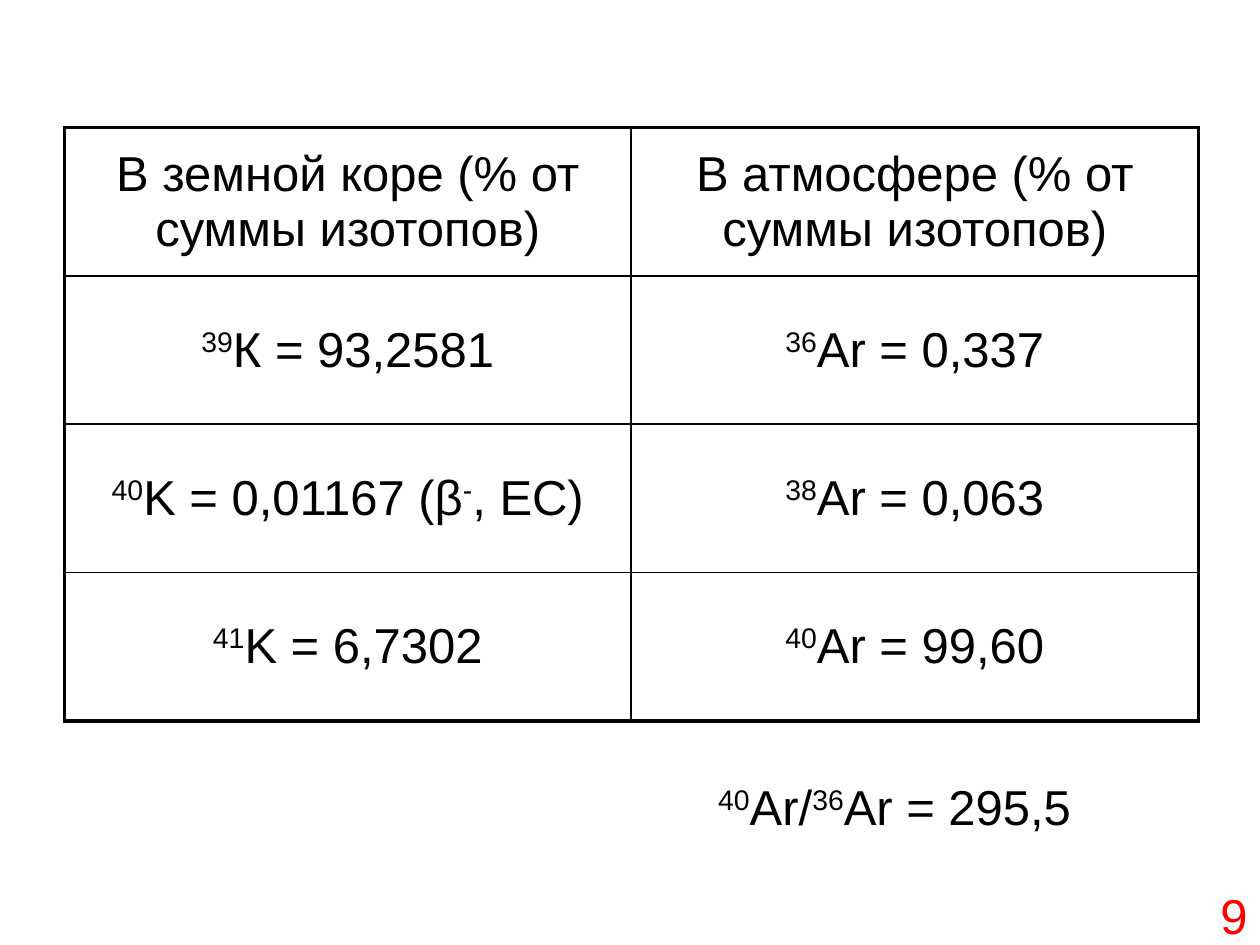
from lxml.etree import SubElement
from pptx import Presentation
from pptx.dml.color import RGBColor
from pptx.enum.text import MSO_ANCHOR as Anchor, MSO_AUTO_SIZE as AutoSize, PP_ALIGN as Align
from pptx.oxml.ns import qn
from pptx.util import Inches, Pt

BLACK, RED = "000000", "FF0000"
THIN, THICK = Pt(1), Pt(2.25)
FONT_FORMAT = {"name": "Arial", "size": Pt(28), "bold": False}


def write(frame, marked_text, color, paragraph_format):
    paragraph = frame.paragraphs[0]
    for key, value in paragraph_format.items():
        setattr(paragraph, key, value)
    for position, piece in enumerate(marked_text.split("^")):
        if not piece:
            continue
        run = paragraph.add_run()
        run.text = piece
        for key, value in FONT_FORMAT.items():
            setattr(run.font, key, value)
        run.font.color.rgb = RGBColor.from_string(color)
        if position % 2:
            run.font._element.set("baseline", "30000")


def draw_border(cell, order, side, width, color):
    properties = cell._tc.get_or_add_tcPr()
    line = SubElement(properties, qn(f"a:ln{side}"), w=str(width))
    fill = SubElement(line, qn("a:solidFill"))
    SubElement(fill, qn("a:srgbClr"), val=color)
    properties.insert(order, line)


deck = Presentation()
deck.slide_width, deck.slide_height = Inches(10), Inches(7.5)
W, H = deck.slide_width, deck.slide_height
slide = deck.slides.add_slide(deck.slide_layouts[6])

isotope_rows = [
    ("В земной коре (% от суммы изотопов)", "В атмосфере (% от суммы изотопов)"),
    ("^39^К = 93,2581", "^36^Ar = 0,337"),
    ("^40^K = 0,01167 (β^-^, EC)", "^38^Ar = 0,063"),
    ("^41^K = 6,7302", "^40^Ar = 99,60"),
]
row_count, column_count = len(isotope_rows), len(isotope_rows[0])
isotopes = slide.shapes.add_table(
    row_count, column_count, int(0.051 * W), int(0.135 * H),
    int(0.45 * W) * column_count, int(0.157 * H) * row_count,
).table
for key, value in {"first_row": False, "horz_banding": False}.items():
    setattr(isotopes, key, value)

for r, isotope_row in enumerate(isotope_rows):
    for c, content in enumerate(isotope_row):
        cell = isotopes.cell(r, c)
        cell.vertical_anchor = Anchor.MIDDLE
        cell.fill.background()
        write(cell.text_frame, content, BLACK,
              {"alignment": Align.CENTER, "space_before": Pt(5.6)})
        outer_sides = {"L": c == 0, "R": c == column_count - 1,
                       "T": r == 0, "B": r == row_count - 1}
        for order, (side, is_outer) in enumerate(outer_sides.items()):
            draw_border(cell, order, side, THICK if is_outer else THIN, BLACK)

captions = [
    ("^40^Ar/^36^Ar = 295,5", BLACK, Align.CENTER, (0.555, 0.815, 0.31, 0.076),
     {"word_wrap": False, "auto_size": AutoSize.SHAPE_TO_FIT_TEXT}),
    ("9", RED, Align.RIGHT, (0.767, 0.931, 0.233, 0.069), {"word_wrap": True}),
]
for content, color, alignment, (left, top, width, height), frame_format in captions:
    frame = slide.shapes.add_textbox(
        int(left * W), int(top * H), int(width * W), int(height * H)).text_frame
    for key, value in frame_format.items():
        setattr(frame, key, value)
    write(frame, content, color, {"alignment": alignment})

deck.save("out.pptx")
